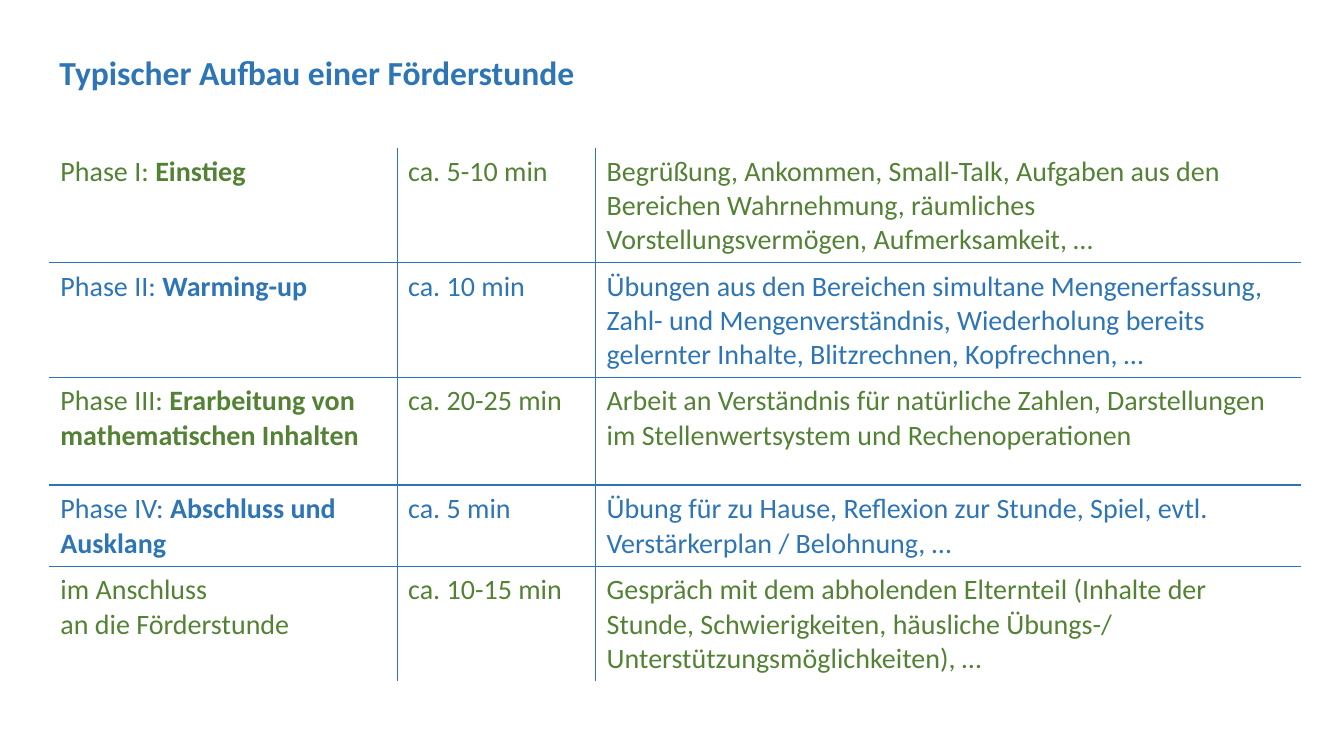
from lxml.etree import SubElement
from pptx import Presentation
from pptx.dml.color import RGBColor
from pptx.enum.text import MSO_ANCHOR, MSO_AUTO_SIZE, PP_ALIGN
from pptx.oxml import parse_xml
from pptx.oxml.ns import nsdecls, qn
from pptx.util import Pt

COLORS = {"blue": "2E75B6", "green": "548235", "border": "2E74B5"}
COLUMN_WIDTHS = [248.4, 141.8, 504]
ROW_HEIGHTS = [77, 77, 77, 55, 77]
PHASES = [
    ("Phase I: ", "Einstieg", "ca. 5-10 min",
     "Begrüßung, Ankommen, Small-Talk, Aufgaben aus den Bereichen Wahrnehmung, "
     "räumliches Vorstellungsvermögen, Aufmerksamkeit, …"),
    ("Phase II: ", "Warming-up", "ca. 10 min",
     "Übungen aus den Bereichen simultane Mengenerfassung, Zahl- und Mengenverständnis, "
     "Wiederholung bereits gelernter Inhalte, Blitzrechnen, Kopfrechnen, …"),
    ("Phase III: ", "Erarbeitung von mathematischen Inhalten", "ca. 20-25 min",
     "Arbeit an Verständnis für natürliche Zahlen, Darstellungen im Stellenwertsystem "
     "und Rechenoperationen"),
    ("Phase IV: ", "Abschluss und Ausklang", "ca. 5 min",
     "Übung für zu Hause, Reflexion zur Stunde, Spiel, evtl. Verstärkerplan / Belohnung, …"),
    ("im Anschluss \nan die Förderstunde", "", "ca. 10-15 min",
     "Gespräch mit dem abholenden Elternteil (Inhalte der Stunde, Schwierigkeiten, "
     "häusliche Übungs-/ Unterstützungsmöglichkeiten), …"),
]


def add_span(para, text, size, color, bold=False):
    for index, line in enumerate(text.split("\n")):
        if index:
            para.add_line_break()
        span = para.add_run()
        span.text = line
        span.font.name = "Calibri"
        span.font.size = Pt(size)
        span.font.bold = bold
        span.font.color.rgb = RGBColor.from_string(COLORS[color])


def set_borders(cell, sides):
    properties = cell._tc.get_or_add_tcPr()
    for index, (side, visible) in enumerate(sides.items()):
        line = parse_xml(f'<a:ln{side} {nsdecls("a")} w="{Pt(1)}"/>')
        if visible:
            fill = SubElement(line, qn("a:solidFill"))
            SubElement(fill, qn("a:srgbClr"), val=COLORS["border"])
        else:
            SubElement(line, qn("a:noFill"))
        properties.insert(index, line)


deck = Presentation()
deck.slide_width, deck.slide_height = Pt(960), Pt(540)
page = deck.slides.add_slide(deck.slide_layouts[5])

title = page.shapes.title
title.left, title.top, title.width, title.height = Pt(35.3), Pt(33.1), Pt(850.3), Pt(36)
frame = title.text_frame
frame.word_wrap = True
frame.auto_size = MSO_AUTO_SIZE.SHAPE_TO_FIT_TEXT
frame.vertical_anchor = MSO_ANCHOR.TOP
para = frame.paragraphs[0]
para.alignment = PP_ALIGN.LEFT
para.line_spacing = 1.0
add_span(para, "Typischer Aufbau einer Förderstunde", 24, "blue", True)

table = page.shapes.add_table(
    len(PHASES), len(COLUMN_WIDTHS), Pt(35.3), Pt(105.4),
    Pt(sum(COLUMN_WIDTHS)), Pt(sum(ROW_HEIGHTS))).table
table.first_row = False
table.horz_banding = False
for column, width in zip(table.columns, COLUMN_WIDTHS):
    column.width = Pt(width)

last_row, last_column = len(PHASES) - 1, len(COLUMN_WIDTHS) - 1
for row_index, (phase, name, duration, content) in enumerate(PHASES):
    table.rows[row_index].height = Pt(ROW_HEIGHTS[row_index])
    color = "blue" if row_index % 2 else "green"
    cell_spans = [[(phase, False), (name, True)], [(duration, False)], [(content, False)]]
    for column_index, spans in enumerate(cell_spans):
        cell = table.cell(row_index, column_index)
        cell.fill.background()
        cell.margin_left = cell.margin_right = Pt(7.9)
        cell.margin_top = cell.margin_bottom = Pt(5)
        for text, bold in spans:
            if text:
                add_span(cell.text_frame.paragraphs[0], text, 20, color, bold)
        set_borders(cell, {
            "L": column_index > 0, "R": column_index < last_column,
            "T": row_index > 0, "B": row_index < last_row})

deck.save("out.pptx")
